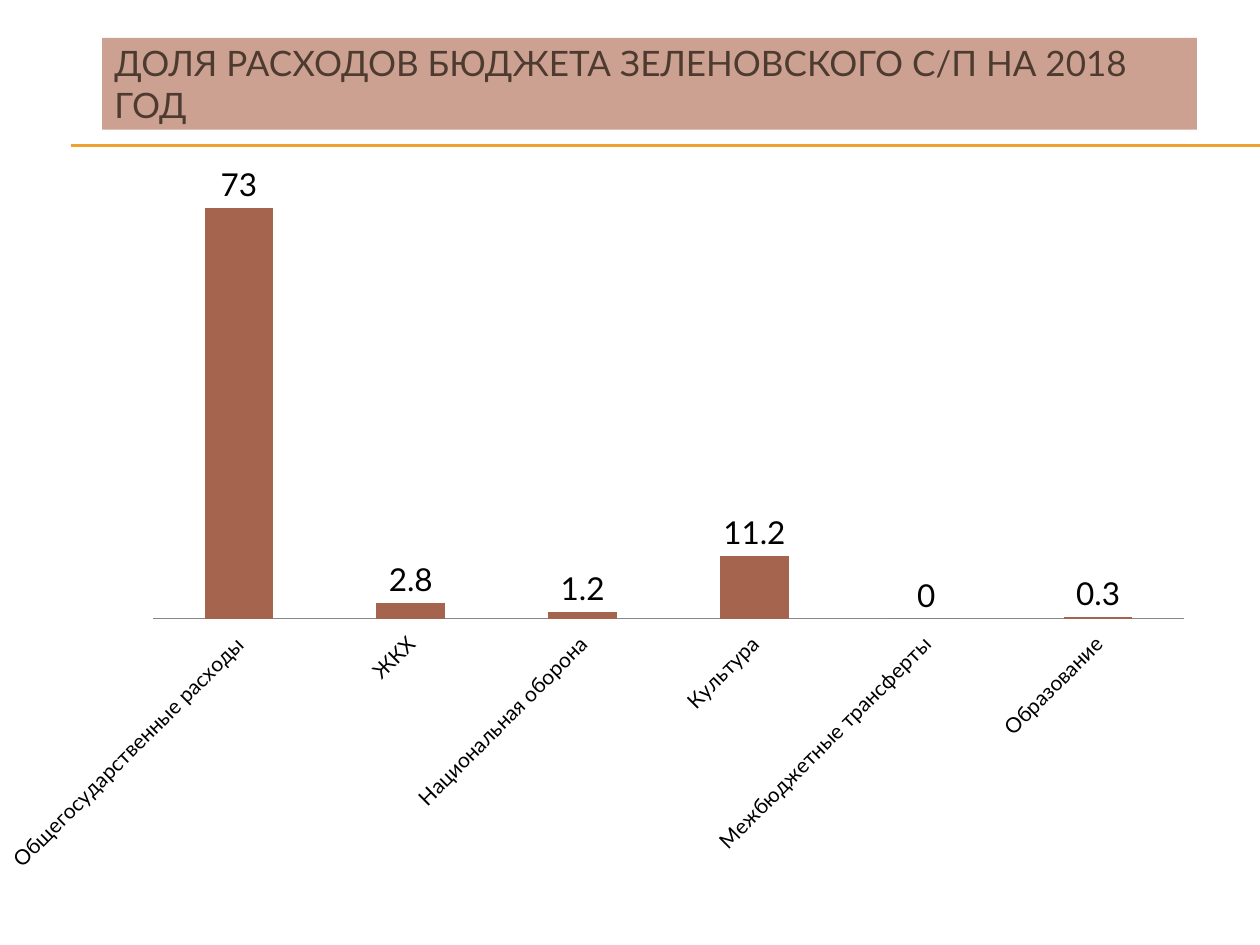
from dataclasses import dataclass

from lxml import etree
from pptx import Presentation
from pptx.chart.data import CategoryChartData
from pptx.dml.color import RGBColor
from pptx.enum.chart import XL_CHART_TYPE, XL_LABEL_POSITION, XL_TICK_LABEL_POSITION, XL_TICK_MARK
from pptx.enum.shapes import MSO_CONNECTOR, MSO_SHAPE
from pptx.enum.text import MSO_ANCHOR, PP_ALIGN
from pptx.oxml import parse_xml
from pptx.oxml.ns import nsdecls, qn
from pptx.slide import Slide
from pptx.util import Inches, Pt

COLUMNS = XL_CHART_TYPE.COLUMN_CLUSTERED
OUTSIDE_END = XL_LABEL_POSITION.OUTSIDE_END
LABELS_LOW = XL_TICK_LABEL_POSITION.LOW
NO_TICKS = XL_TICK_MARK.NONE
STRAIGHT = MSO_CONNECTOR.STRAIGHT
RECTANGLE = MSO_SHAPE.RECTANGLE
MIDDLE = MSO_ANCHOR.MIDDLE
LEFT = PP_ALIGN.LEFT


@dataclass(frozen=True)
class Theme:
    font: str = "Lato"
    title_size: Pt = Pt(20)
    value_size: Pt = Pt(18)
    category_size: Pt = Pt(12)
    rule_width: Pt = Pt(0.75)
    banner: RGBColor = RGBColor(0xCC, 0xA1, 0x92)
    title: RGBColor = RGBColor(0x4E, 0x3B, 0x30)
    rule: RGBColor = RGBColor(0xF0, 0xA2, 0x2E)
    bar: RGBColor = RGBColor(0xA5, 0x64, 0x4E)
    axis: RGBColor = RGBColor(0x87, 0x87, 0x87)
    text: RGBColor = RGBColor(0, 0, 0)


@dataclass(frozen=True)
class Expense:
    category: str
    share: float


THEME = Theme()
TITLE = "ДОЛЯ РАСХОДОВ БЮДЖЕТА ЗЕЛЕНОВСКОГО С/П НА 2018 ГОД"
EXPENSES = [
    Expense("Общегосударственные расходы", 73),
    Expense("ЖКХ", 2.8),
    Expense("Национальная оборона", 1.2),
    Expense("Культура", 11.2),
    Expense("Межбюджетные трансферты", 0),
    Expense("Образование", 0.3),
]
RULE_HEIGHTS = (1.15, 1.16)
PLOT_AREA = {"x": 0.127, "y": 0.026, "w": 0.856, "h": 0.565}


def add_rule(slide: Slide, top: float) -> None:
    rule = slide.shapes.add_connector(STRAIGHT, Inches(0.56), Inches(top), Inches(10), Inches(top))
    rule.line.color.rgb = THEME.rule
    rule.line.width = THEME.rule_width
    etree.SubElement(rule._element.spPr, qn("a:effectLst"))


def add_title(slide: Slide) -> None:
    banner = slide.shapes.add_shape(RECTANGLE, Inches(0.81), Inches(0.3), Inches(8.69), Inches(0.73))
    banner.shadow.inherit = False
    banner.fill.solid()
    banner.fill.fore_color.rgb = THEME.banner
    banner.line.fill.background()
    frame = banner.text_frame
    frame.word_wrap = True
    frame.vertical_anchor = MIDDLE
    heading = frame.paragraphs[0]
    heading.text = TITLE
    heading.alignment = LEFT
    heading.font.name = THEME.font
    heading.font.size = THEME.title_size
    heading.font.color.rgb = THEME.title


def set_plot_area(chart) -> None:
    """Fix the inner plot area as fractions of the chart frame."""
    plot_area = chart._chartSpace.chart.plotArea
    for automatic in plot_area.findall(qn("c:layout")):
        plot_area.remove(automatic)
    modes = "".join(f'<c:{side}Mode val="edge"/>' for side in "xy")
    sizes = "".join(f'<c:{side} val="{value}"/>' for side, value in PLOT_AREA.items())
    plot_area.insert(0, parse_xml(
        f'<c:layout {nsdecls("c")}><c:manualLayout><c:layoutTarget val="inner"/>'
        f"{modes}{sizes}</c:manualLayout></c:layout>"
    ))


def add_expense_chart(slide: Slide) -> None:
    data = CategoryChartData()
    data.categories = [expense.category for expense in EXPENSES]
    data.add_series("Series 1", [expense.share for expense in EXPENSES])
    chart = slide.shapes.add_chart(
        COLUMNS, Inches(0), Inches(1.17), Inches(9.56), Inches(6.33), data
    ).chart
    chart.has_title = False
    chart.has_legend = False
    chart.font.name = THEME.font
    chart.font.size = THEME.value_size
    chart.font.color.rgb = THEME.text

    plot = chart.plots[0]
    plot.gap_width = 150
    plot.vary_by_categories = False
    bars = plot.series[0]
    bars.format.fill.solid()
    bars.format.fill.fore_color.rgb = THEME.bar
    bars.data_labels.show_value = True
    bars.data_labels.position = OUTSIDE_END

    categories = chart.category_axis
    categories.major_tick_mark = NO_TICKS
    categories.tick_label_position = LABELS_LOW
    categories.tick_labels.font.size = THEME.category_size
    categories.format.line.color.rgb = THEME.axis
    categories.format.line.width = THEME.rule_width
    slant = categories._element.find(qn("c:txPr")).find(qn("a:bodyPr"))
    slant.set("rot", str(-45 * 60000))
    slant.set("vert", "horz")

    shares = chart.value_axis
    shares.minimum_scale = 0
    shares.maximum_scale = 80
    shares.has_major_gridlines = False
    shares.visible = False
    set_plot_area(chart)


def main() -> None:
    presentation = Presentation()
    presentation.slide_width = Inches(10)
    presentation.slide_height = Inches(7.5)
    slide = presentation.slides.add_slide(presentation.slide_layouts[6])
    for top in RULE_HEIGHTS:
        add_rule(slide, top)
    add_title(slide)
    add_expense_chart(slide)
    presentation.save("out.pptx")


if __name__ == "__main__":
    main()
